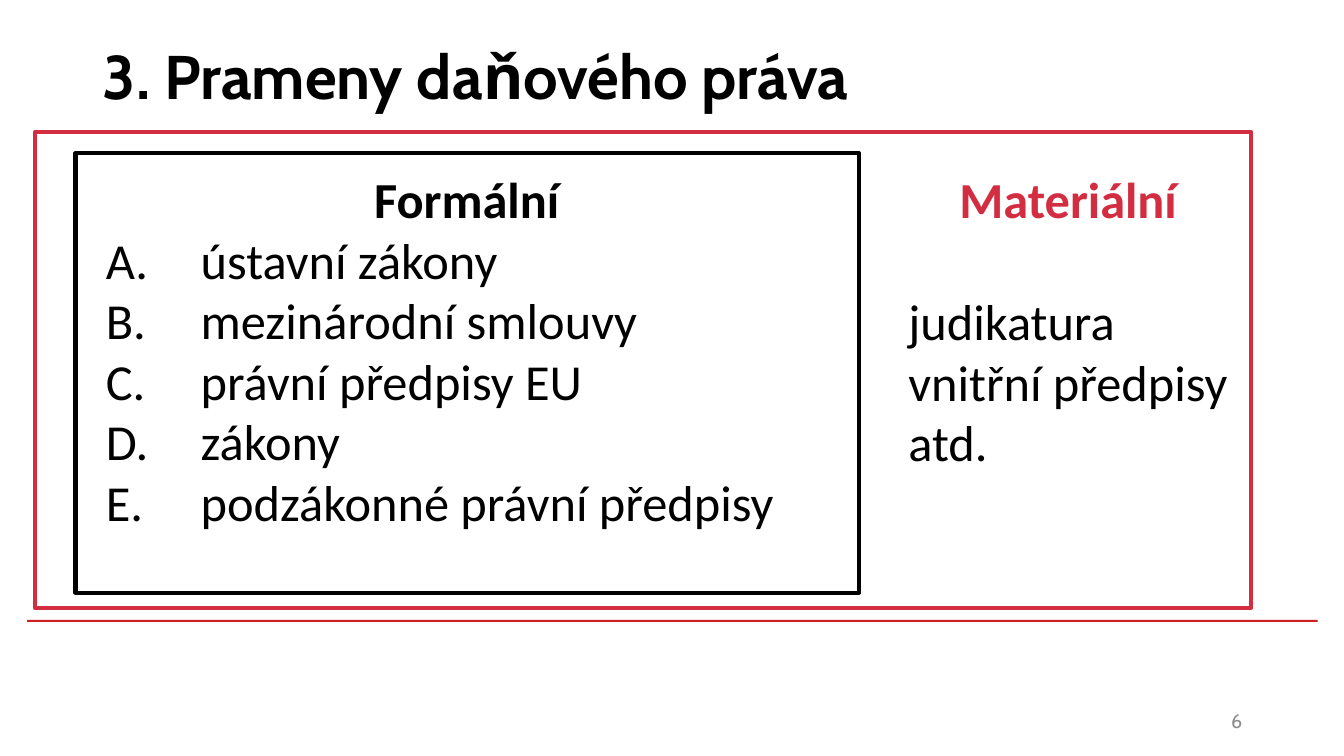
"""Builds the slide on the formal and material sources of tax law."""
from lxml import etree
from pptx import Presentation, util as u
from pptx.dml.color import RGBColor
from pptx.enum import shapes, text
from pptx.oxml.ns import qn

PX = 9144
COLORS = {"black": "000000", "white": "FFFFFF", "red": "D22D40", "rule": "CD1F21", "gray": "8C8C8C"}
INDENT = 94 * PX


def place(item, left, top, width, height):
    item.left, item.top, item.width, item.height = (n * PX for n in (left, top, width, height))


def style(paragraph, size, font, color, bold, align):
    paragraph.alignment = align
    for run in paragraph.runs:
        run.font.size, run.font.name, run.font.bold = u.Pt(size), font, bold
        run.font.color.rgb = RGBColor.from_string(COLORS[color])


prs = Presentation()
prs.slide_width, prs.slide_height = 1333 * PX, 750 * PX
slide = prs.slides.add_slide(prs.slide_layouts[3])
title, formal, material = slide.placeholders
ALIGN = text.PP_ALIGN

place(title, 92, 2, 1150, 145)
title.text_frame.text = "3. Prameny daňového práva"
title.text_frame.vertical_anchor = text.MSO_ANCHOR.MIDDLE
style(title.text_frame.paragraphs[0], 44, "Cabin", "black", True, ALIGN.LEFT)

for box, fill, line in [
    ((27, 615, 1280, 2), "rule", None),
    ((35, 131, 1206, 472), "white", "red"),
    ((75, 152, 777, 436), "white", "black"),
]:
    frame = slide.shapes.add_shape(shapes.MSO_SHAPE.RECTANGLE, *(n * PX for n in box))
    frame.shadow.inherit = False
    frame.fill.solid()
    frame.fill.fore_color.rgb = RGBColor.from_string(COLORS[fill])
    if line:
        frame.line.color.rgb = RGBColor.from_string(COLORS[line])
        frame.line.width = u.Pt(3)
    else:
        frame.line.fill.background()

formal_sources = ["ústavní zákony", "mezinárodní smlouvy", "právní předpisy EU", "zákony",
                  "podzákonné právní předpisy"]
material_sources = ["judikatura", "vnitřní předpisy", "atd."]
for column, box, heading, color, sources, lettered, gap in [
    (material, (891, 162, 337, 372), "Materiální", "red", material_sources, False, 44),
    (formal, (95, 162, 736, 374), "Formální", "black", formal_sources, True, 0),
]:
    slide.shapes.element.append(column.element)
    place(column, *box)
    column.text_frame.text = "\n".join([heading, *sources])
    column.text_frame.auto_size = text.MSO_AUTO_SIZE.NONE
    for row, paragraph in enumerate(column.text_frame.paragraphs):
        props = paragraph._p.get_or_add_pPr()
        if lettered and row:
            props.set("marL", str(INDENT))
            props.set("indent", str(-INDENT))
            etree.SubElement(props, qn("a:buFont")).set("typeface", "Calibri")
            etree.SubElement(props, qn("a:buAutoNum")).set("type", "alphaUcPeriod")
        else:
            props.set("marL", "0")
            props.set("indent", "0")
            etree.SubElement(props, qn("a:buNone"))
        paragraph.space_before = u.Pt(0)
        if row:
            style(paragraph, 36, "Calibri", "black", False, ALIGN.LEFT if lettered else ALIGN.JUSTIFY)
        else:
            paragraph.space_after = u.Pt(gap)
            style(paragraph, 36, "Calibri", color, True, ALIGN.CENTER)

page = slide.shapes.add_textbox(*(n * PX for n in (942, 695, 300, 40))).text_frame
page.word_wrap = True
page.vertical_anchor = text.MSO_ANCHOR.MIDDLE
page.text = "6"
style(page.paragraphs[0], 14, "Cabin", "gray", False, ALIGN.RIGHT)

prs.save("out.pptx")
